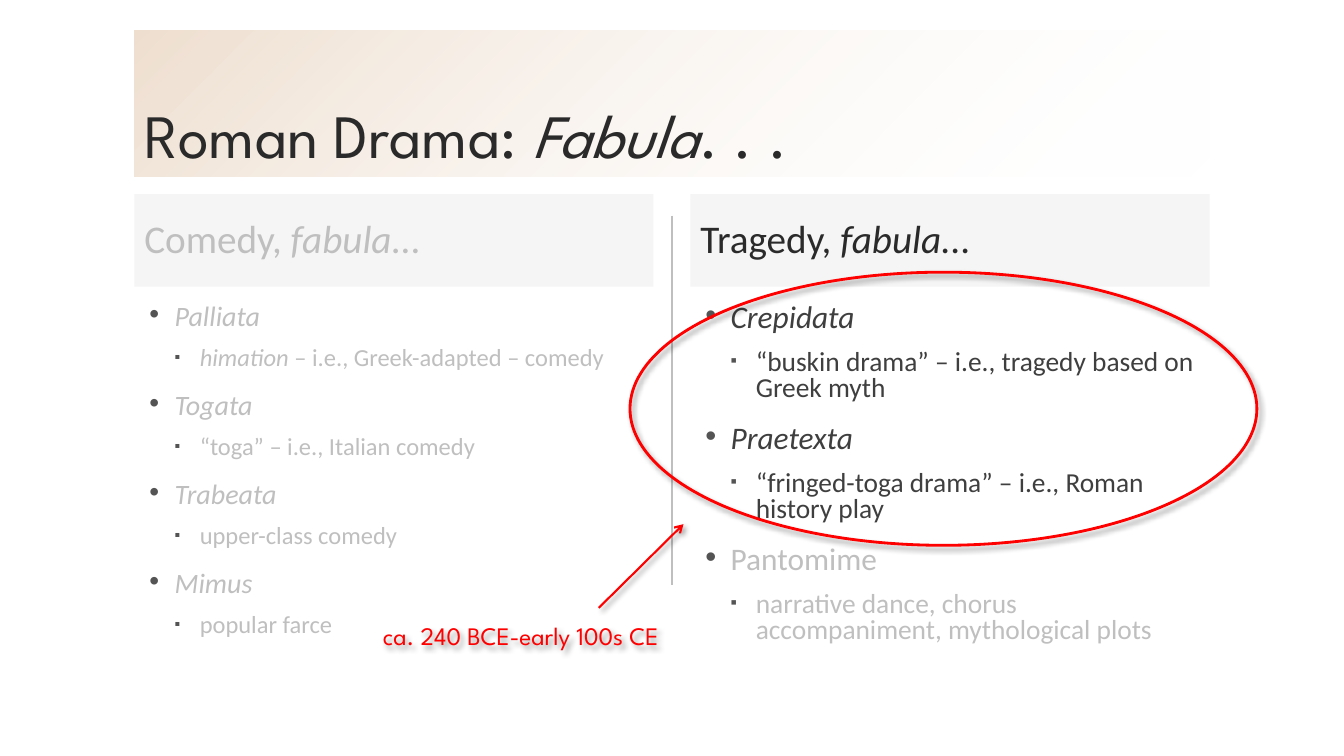
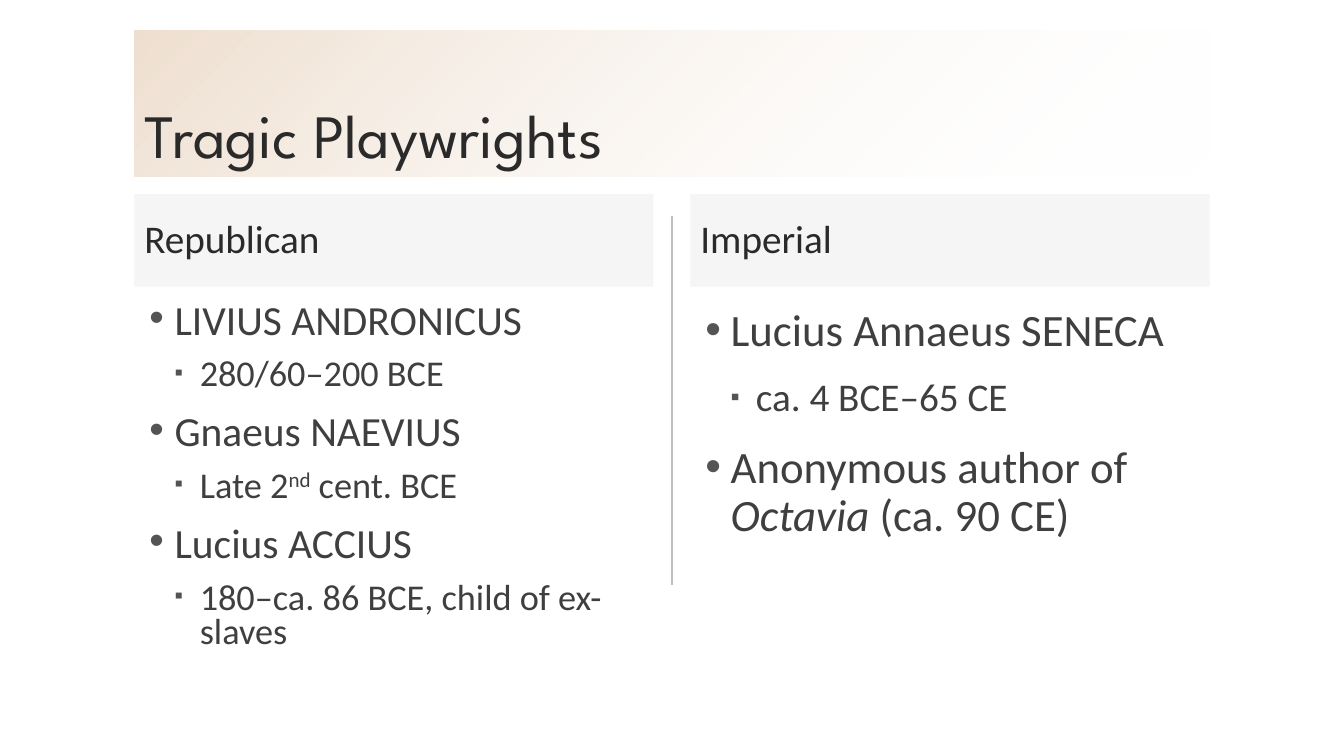
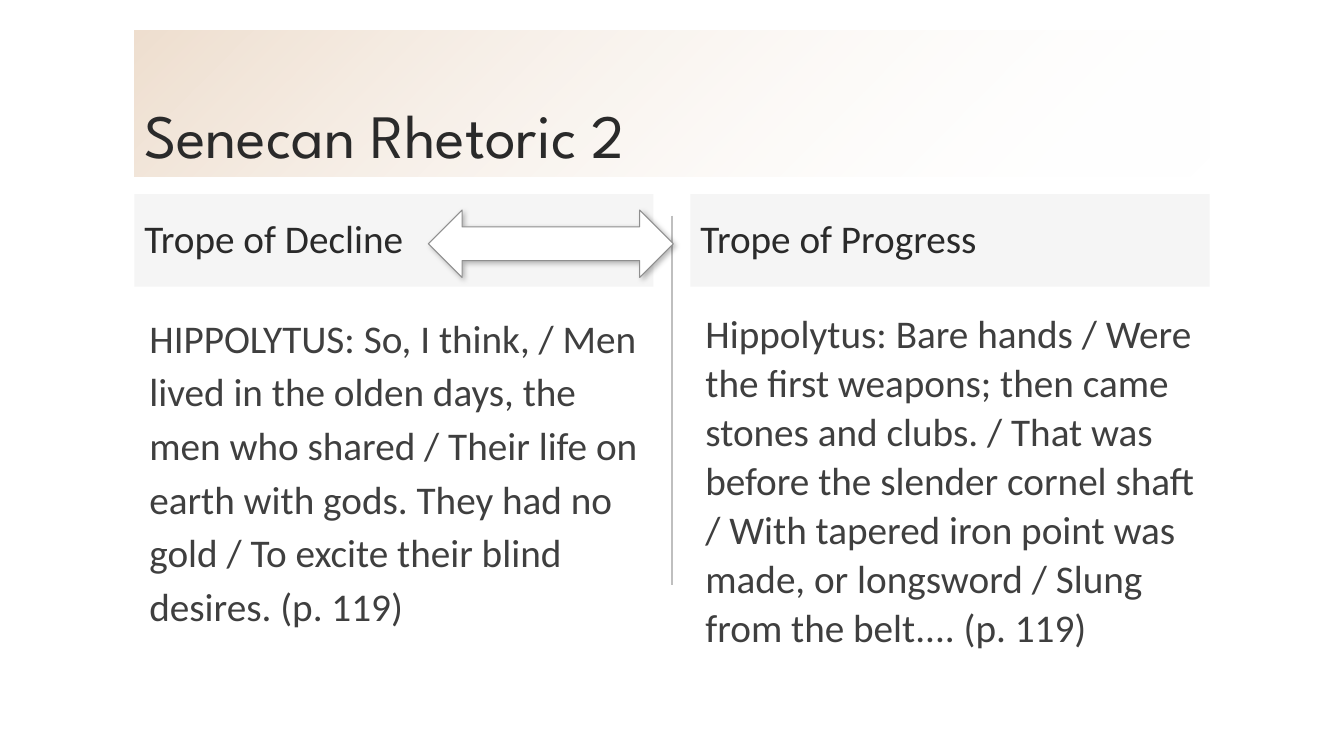
from dataclasses import dataclass
from functools import partial
from typing import Any, NamedTuple

from lxml import etree
from pptx import Presentation
from pptx.dml.color import RGBColor
from pptx.enum import shapes, text
from pptx.oxml import ns
from pptx.util import Pt

INK = RGBColor(0x2A, 0x2A, 0x2A)
BODY_INK = RGBColor(0x3F, 0x3F, 0x3F)
BULLET_INK = RGBColor(0x54, 0x54, 0x54)
FADED = RGBColor(0xBF, 0xBF, 0xBF)
ARROW_EDGE = RGBColor(0x8F, 0x8F, 0x8F)
TAN = RGBColor(0xCE, 0x9F, 0x71)
WHITE = RGBColor(0xFF, 0xFF, 0xFF)
RED = RGBColor(0xFF, 0x00, 0x00)
BLACK = RGBColor(0x00, 0x00, 0x00)

TITLE_FONT = "League Spartan"
BODY_FONT = "Calibri"

LEFT, CONTENT_WIDTH = 96, 768
COLUMN_WIDTH = 370.8
COLUMN_LEFTS = (LEFT, LEFT + CONTENT_WIDTH - COLUMN_WIDTH)
MIDDLE = LEFT + CONTENT_WIDTH / 2


class Span(NamedTuple):
    text: str
    italic: bool = False
    baseline: int = 0


class Shadow(NamedTuple):
    alpha: int
    blur: float
    distance: float


class Box(NamedTuple):
    left: float
    top: float
    width: float
    height: float

    def lengths(self) -> tuple:
        return tuple(Pt(value) for value in self)


@dataclass(frozen=True)
class Level:
    indent: float
    hanging: float
    before: float
    bullet: str = ""
    bullet_size: int = 100


@dataclass(frozen=True)
class Entry:
    spans: tuple
    level: Level
    color: RGBColor = BODY_INK


@dataclass(frozen=True)
class Column:
    heading: tuple
    entries: tuple
    sizes: dict
    spacings: dict
    heading_color: RGBColor = INK


italic = partial(Span, italic=True)
PLAIN = Level(0, 0, 0)
TOPIC = Level(21.6, -18, 18, "•")
DETAIL = Level(39.6, -18, 12, "▪", 66)
QUOTE = Level(3.6, 0, 18)
TIGHT = {TOPIC: 0.7, DETAIL: 0.8}
CALLOUT_SHADOW = Shadow(40, 4, 3)
ARROW_SHADOW = Shadow(28, 4, 2)


def add_node(parent: Any, tag: str, **attributes: Any) -> Any:
    values = {name: str(value) for name, value in attributes.items()}
    return etree.SubElement(parent, ns.qn(tag), values)


def set_alpha(color_node: Any, percent: float) -> None:
    add_node(color_node, "a:alpha", val=int(percent * 1000))


def set_shadow(shape: Any, shadow: Shadow | None = None) -> None:
    properties = shape._element.spPr
    effects = properties.find(ns.qn("a:effectLst"))
    if effects is None:
        effects = add_node(properties, "a:effectLst")
    if shadow:
        outer = add_node(effects, "a:outerShdw", blurRad=Pt(shadow.blur),
                         dist=Pt(shadow.distance), dir=45 * 60000,
                         algn="tl", rotWithShape=0)
        set_alpha(add_node(outer, "a:srgbClr", val=BLACK), shadow.alpha)


def write(frame: Any, *spans: Span, size: float, color: RGBColor,
          font: str = BODY_FONT, spacing: float = 0.9,
          level: Level = PLAIN) -> None:
    first = frame.paragraphs[0]
    para = frame.add_paragraph() if first.runs else first
    para.alignment = text.PP_ALIGN.LEFT
    para.line_spacing = spacing
    para.space_before = Pt(level.before)
    properties = para._p.get_or_add_pPr()
    properties.set("marL", str(Pt(level.indent)))
    properties.set("indent", str(Pt(level.hanging)))
    if level.bullet:
        tint = add_node(properties, "a:buClr")
        add_node(tint, "a:srgbClr", val=BULLET_INK)
        add_node(properties, "a:buSzPct", val=level.bullet_size * 1000)
        add_node(properties, "a:buFont", typeface="Arial")
        add_node(properties, "a:buChar", char=level.bullet)
    for span in spans:
        run = para.add_run()
        run.text = span.text
        run.font.name = font
        run.font.size = Pt(size)
        run.font.color.rgb = color
        run.font.italic = span.italic
        if span.baseline:
            run.font._element.set("baseline", str(span.baseline * 1000))


def add_panel(page: Any, box: Box, anchor: Any) -> Any:
    panel = page.shapes.add_shape(shapes.MSO_SHAPE.RECTANGLE, *box.lengths())
    panel.shadow.inherit = False
    panel.line.fill.background()
    panel.text_frame.word_wrap = True
    panel.text_frame.vertical_anchor = anchor
    return panel


def add_text_box(parent: Any, box: Box) -> Any:
    holder = parent.shapes.add_textbox(*box.lengths())
    holder.text_frame.word_wrap = True
    return holder


def add_line(parent: Any, start: tuple, end: tuple, color: RGBColor,
             width: float) -> Any:
    ends = [Pt(value) for value in (*start, *end)]
    line = parent.shapes.add_connector(shapes.MSO_CONNECTOR.STRAIGHT, *ends)
    line.line.color.rgb = color
    line.line.width = Pt(width)
    return line


def add_title(page: Any, spans: tuple) -> None:
    band = add_panel(page, Box(LEFT, 21.6, CONTENT_WIDTH, 104.6),
                     text.MSO_ANCHOR.BOTTOM)
    band.fill.gradient()
    band.fill.gradient_angle = 315
    for stop, color, position in zip(band.fill.gradient_stops, (TAN, WHITE), (0, 1)):
        stop.color.rgb = color
        stop.position = position
    for node, alpha in zip(band._element.spPr.iter(ns.qn("a:srgbClr")), (34, 0)):
        set_alpha(node, alpha)
    write(band.text_frame, *spans, size=44, color=INK, font=TITLE_FONT)


def add_column(page: Any, left: float, column: Column) -> None:
    heading = add_panel(page, Box(left, 138.7, COLUMN_WIDTH, 66.1),
                        text.MSO_ANCHOR.MIDDLE)
    heading.fill.solid()
    heading.fill.fore_color.rgb = FADED
    set_alpha(next(heading._element.spPr.iter(ns.qn("a:srgbClr"))), 15)
    write(heading.text_frame, *column.heading, size=28, color=column.heading_color)
    body = add_text_box(page, Box(left, 216, COLUMN_WIDTH, 270))
    for entry in column.entries:
        write(body.text_frame, *entry.spans, size=column.sizes[entry.level],
              color=entry.color, spacing=column.spacings[entry.level],
              level=entry.level)


def add_page(deck: Any, title: tuple, columns: tuple) -> Any:
    page = deck.slides.add_slide(deck.slide_layouts[6])
    set_shadow(add_line(page, (MIDDLE, 154), (MIDDLE, 417.6), FADED, 1))
    add_title(page, title)
    for left, column in zip(COLUMN_LEFTS, columns):
        add_column(page, left, column)
    return page


def add_callout(page: Any) -> None:
    group = page.shapes.add_group_shape()
    ring = group.shapes.add_shape(shapes.MSO_SHAPE.OVAL,
                                  *Box(450, 194.4, 447.8, 195.1).lengths())
    ring.fill.background()
    ring.line.color.rgb = RED
    ring.line.width = Pt(2)
    pointer = add_line(group, (427.7, 434.2), (488.2, 374.4), RED, 1.5)
    add_node(pointer.line._get_or_add_ln(), "a:tailEnd", type="arrow")
    label = add_text_box(group, Box(266.4, 439.9, 265.7, 33.1))
    write(label.text_frame, Span("ca. 240 BCE-early 100s CE"), size=18,
          color=RED, font=TITLE_FONT, spacing=1)
    for shape in (ring, pointer, label):
        set_shadow(shape, CALLOUT_SHADOW)


def add_double_arrow(page: Any) -> None:
    arrow = page.shapes.add_shape(shapes.MSO_SHAPE.LEFT_RIGHT_ARROW,
                                  *Box(306, 150, 175, 48.2).lengths())
    arrow.fill.solid()
    arrow.fill.fore_color.rgb = WHITE
    arrow.line.color.rgb = ARROW_EDGE
    arrow.line.width = Pt(0.75)
    set_shadow(arrow, ARROW_SHADOW)


COMEDY = Column(
    (Span("Comedy, "), italic("fabula...")),
    (
        Entry((italic("Palliata"),), TOPIC, FADED),
        Entry((italic("himation"), Span(" – i.e., Greek-adapted – comedy")), DETAIL, FADED),
        Entry((italic("Togata"),), TOPIC, FADED),
        Entry((Span("“toga” – i.e., Italian comedy"),), DETAIL, FADED),
        Entry((italic("Trabeata"),), TOPIC, FADED),
        Entry((Span("upper-class comedy"),), DETAIL, FADED),
        Entry((italic("Mimus"),), TOPIC, FADED),
        Entry((Span("popular farce"),), DETAIL, FADED),
    ),
    {TOPIC: 20, DETAIL: 17.5}, TIGHT, FADED)

TRAGEDY = Column(
    (Span("Tragedy, "), italic("fabula...")),
    (
        Entry((italic("Crepidata"),), TOPIC),
        Entry((Span("“buskin drama” – i.e., tragedy based on Greek myth"),), DETAIL),
        Entry((italic("Praetexta"),), TOPIC),
        Entry((Span("“fringed-toga drama” – i.e., Roman history play"),), DETAIL),
        Entry((Span("Pantomime"),), TOPIC, FADED),
        Entry((Span("narrative dance, chorus accompaniment, mythological plots"),),
              DETAIL, FADED),
    ),
    {TOPIC: 22.4, DETAIL: 19.6}, TIGHT)

REPUBLICAN = Column(
    (Span("Republican"),),
    (
        Entry((Span("LIVIUS ANDRONICUS"),), TOPIC),
        Entry((Span("280/60–200 BCE"),), DETAIL),
        Entry((Span("Gnaeus NAEVIUS"),), TOPIC),
        Entry((Span("Late 2"), Span("nd", baseline=30), Span(" cent. BCE")), DETAIL),
        Entry((Span("Lucius ACCIUS"),), TOPIC),
        Entry((Span("180–ca. 86 BCE, child of ex-slaves"),), DETAIL),
    ),
    {TOPIC: 29.6, DETAIL: 25.9}, TIGHT)

IMPERIAL = Column(
    (Span("Imperial"),),
    (
        Entry((Span("Lucius Annaeus SENECA"),), TOPIC),
        Entry((Span("ca. 4 BCE–65 CE"),), DETAIL),
        Entry((Span("Anonymous author of "), italic("Octavia"), Span(" (ca. 90 CE)")), TOPIC),
    ),
    {TOPIC: 32, DETAIL: 28}, {TOPIC: 0.9, DETAIL: 1.0})

DECLINE = Column(
    (Span("Trope of Decline"),),
    (Entry((Span(
        "HIPPOLYTUS: So, I think, / Men lived in the olden days, the men who shared / "
        "Their life on earth with gods. They had no gold / To excite their blind "
        "desires. (p. 119)"),), QUOTE),),
    {QUOTE: 28}, {QUOTE: 1.14})

PROGRESS = Column(
    (Span("Trope of Progress"),),
    (Entry((Span(
        "Hippolytus: Bare hands / Were the first weapons; then came stones and clubs. / "
        "That was before the slender cornel shaft / With tapered iron point was made, "
        "or longsword / Slung from the belt.... (p. 119)"),), QUOTE),),
    {QUOTE: 28}, {QUOTE: 1.04})


def main() -> None:
    deck = Presentation()
    deck.slide_width, deck.slide_height = Pt(960), Pt(540)
    drama = add_page(deck, (Span("Roman Drama: "), italic("Fabula"), Span(". . .")),
                     (COMEDY, TRAGEDY))
    add_callout(drama)
    add_page(deck, (Span("Tragic Playwrights"),), (REPUBLICAN, IMPERIAL))
    rhetoric = add_page(deck, (Span("Senecan Rhetoric 2"),), (DECLINE, PROGRESS))
    add_double_arrow(rhetoric)
    deck.save("out.pptx")


if __name__ == "__main__":
    main()
